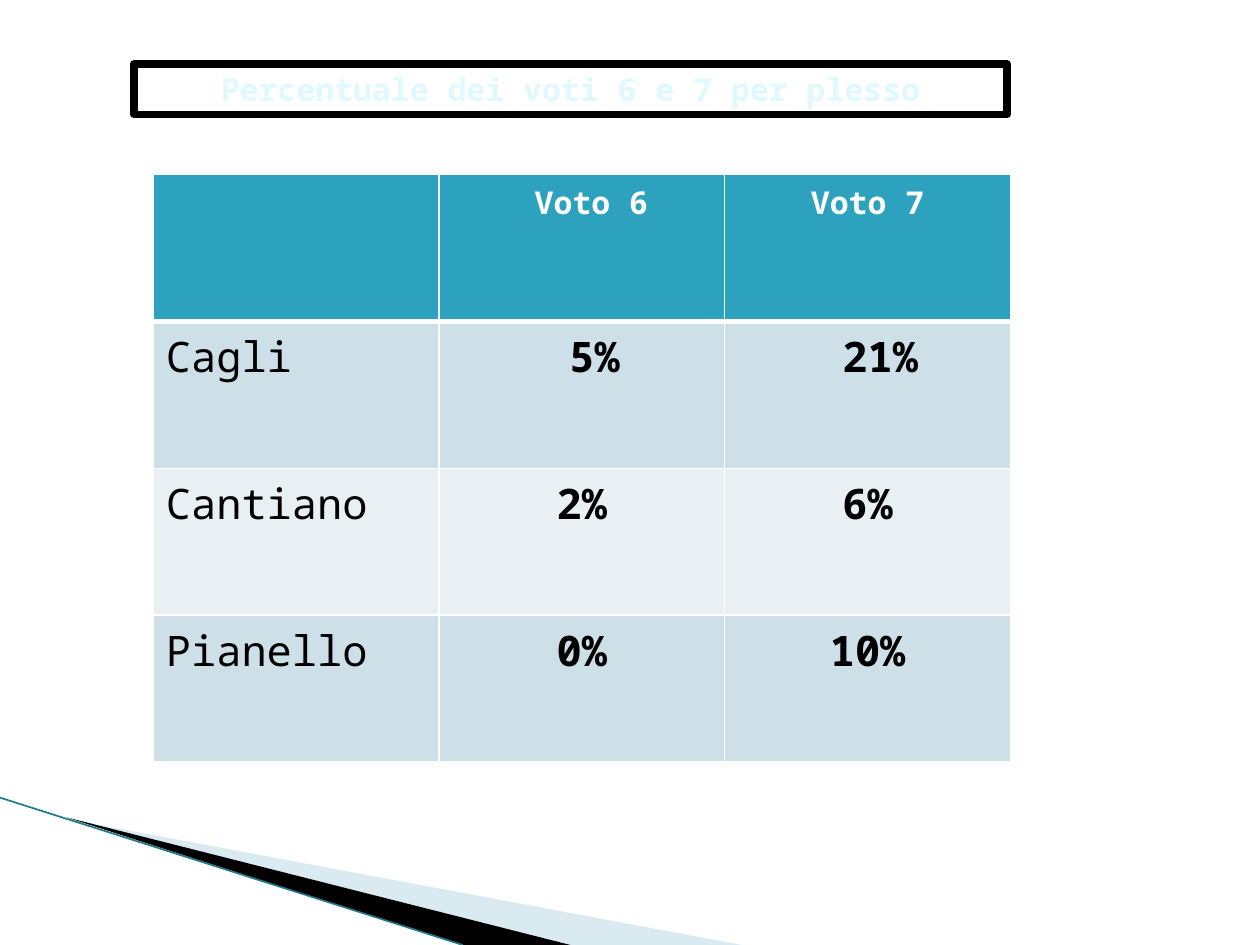
from lxml import etree
from pptx import Presentation
from pptx import util as u
from pptx.dml import color
from pptx.enum import text
from pptx.oxml import ns

FONT = "Noto Sans Mono"
HUES = {
    "white": "FFFFFF", "black": "000000", "head": "2DA2BF",
    "dark": "CDE0E8", "light": "E8F0F4", "title": "DFF9FF",
    "wedge": "A0CBDC", "line": "1F7A8C",
}
ROWS = [
    ["", " Voto 6", "Voto 7"],
    ["Cagli", " 5%", " 21%"],
    ["Cantiano", "2%", "6%"],
    ["Pianello", "0%", "10%"],
]


def rgb(name):
    return color.RGBColor.from_string(HUES[name])


def sub(node, tag, **atts):
    return etree.SubElement(node, ns.qn(tag), **atts)


def paint(item, name):
    item.fill.solid()
    item.fill.fore_color.rgb = rgb(name)


def write(frame, words, size=24, hue="black", bold=False, mid=True):
    para = frame.paragraphs[0]
    para.alignment = text.PP_ALIGN.CENTER if mid else text.PP_ALIGN.LEFT
    run = para.add_run()
    run.text = words
    font = run.font
    font.name, font.size, font.bold = FONT, u.Pt(size), bold
    font.color.rgb = rgb(hue)


def border(cell, tag, width):
    line = sub(cell._tc.get_or_add_tcPr(), tag, w=str(u.Pt(width)))
    fill = sub(line, "a:solidFill")
    sub(fill, "a:srgbClr", val=HUES["white"])


def add_title(slide):
    box = slide.shapes.title
    box.left, box.top = u.Cm(2.7), u.Cm(1.29)
    box.width, box.height = u.Cm(17.6), u.Cm(1.02)
    paint(box, "white")
    box.line.color.rgb = rgb("black")
    box.line.width = u.Pt(4.33)
    sub(box.line._get_or_add_ln(), "a:round")
    frame = box.text_frame
    frame.word_wrap = True
    frame.auto_size = text.MSO_AUTO_SIZE.NONE
    frame.vertical_anchor = text.MSO_ANCHOR.TOP
    write(frame, "Percentuale dei voti 6 e 7 per plesso",
          size=18, hue="title", bold=True)


def add_wedge(slide, spots, hue, alpha=100):
    spots = [(u.Cm(x), u.Cm(y)) for x, y in spots]
    pen = slide.shapes.build_freeform(*spots[0])
    pen.add_line_segments(spots[1:], close=True)
    wedge = pen.convert_to_shape()
    wedge.shadow.inherit = False
    wedge.line.fill.background()
    paint(wedge, hue)
    if alpha < 100:
        tone = wedge._element.spPr.find(".//" + ns.qn("a:srgbClr"))
        sub(tone, "a:alpha", val=str(alpha * 1000))


def add_line(slide, start, end):
    ends = [u.Cm(n) for n in (*start, *end)]
    line = slide.shapes.add_connector(1, *ends)
    line.line.color.rgb = rgb("line")
    line.line.width = u.Pt(0.95)
    sub(line._element.spPr, "a:effectLst")


def add_grid(slide):
    wide, high = u.Cm(5.76), u.Cm(2.96)
    grid = slide.shapes.add_table(
        len(ROWS), 3, u.Cm(3.09), u.Cm(3.52), wide * 3, high * len(ROWS)).table
    for r, row in enumerate(ROWS):
        grid.rows[r].height = high
        top, base = (3 if r == 1 else 1), (3 if r == 0 else 1)
        for c, words in enumerate(row):
            cell = grid.cell(r, c)
            for tag, width in (("a:lnL", 1), ("a:lnR", 1),
                               ("a:lnT", top), ("a:lnB", base)):
                border(cell, tag, width)
            if r == 0:
                paint(cell, "head")
            else:
                paint(cell, "dark" if r % 2 else "light")
            if words:
                write(cell.text_frame, words, size=24 if r else 18,
                      hue="black" if r else "white",
                      bold=r == 0 or c > 0, mid=c > 0)


def main():
    deck = Presentation()
    deck.slide_width, deck.slide_height = u.Cm(25.4), u.Cm(19.05)
    slide = deck.slides.add_slide(deck.slide_layouts[5])
    add_wedge(slide, [(1.4, 16.52), (14.95, 19.05), (11.5, 19.05)],
              "wedge", alpha=40)
    add_wedge(slide, [(1.35, 16.48), (11.5, 19.05), (9.3, 19.05)], "black")
    add_line(slide, (0, 16.08), (9.33, 19.05))
    add_grid(slide)
    add_title(slide)
    deck.save("out.pptx")


if __name__ == "__main__":
    main()
